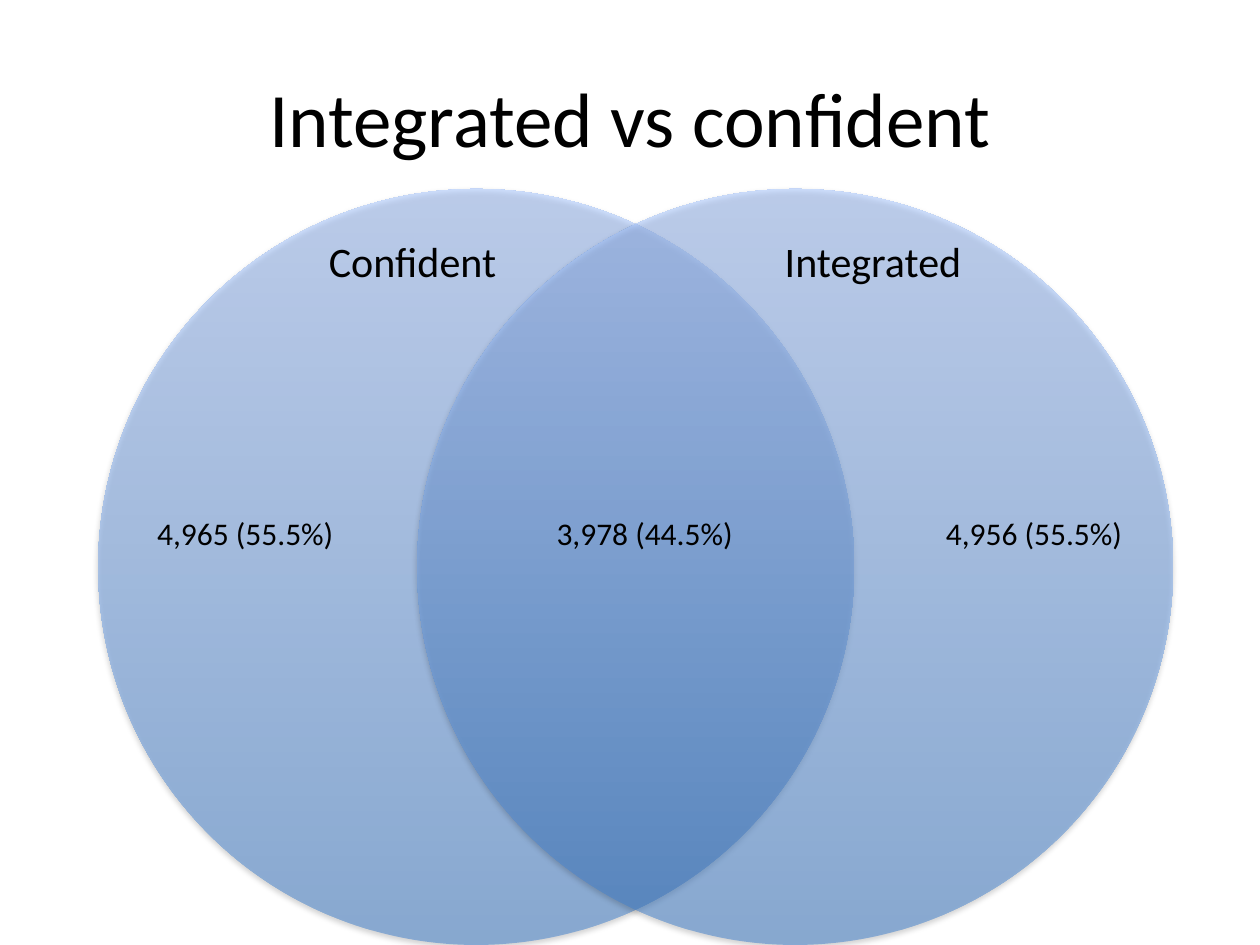
from lxml.etree import SubElement
from pptx import Presentation
from pptx.dml.color import RGBColor
from pptx.enum.shapes import MSO_SHAPE
from pptx.enum.text import MSO_ANCHOR, MSO_AUTO_SIZE, PP_ALIGN
from pptx.oxml.ns import qn
from pptx.util import Cm, Pt

TEXT_COLOR = "000000"
CIRCLE_COLORS = ("3F80CE", "A4C4FF")  # bottom to top
CIRCLE_ALPHA = 51
DIAMETER = 15.24
CIRCLE_OFFSET = 6.43

# text, left, top, width, height (cm, within the diagram), point size
LABELS = [
    ("Confident", 4.4, 0.81, 3.94, 1.27, 24),
    ("Integrated", 13.59, 0.81, 4.17, 1.27, 24),
    ("3,978 (44.5%)", 8.99, 6.43, 4.09, 1.02, 18),
    ("4,965 (55.5%)", 0.94, 6.43, 4.09, 1.02, 18),
    ("4,956 (55.5%)", 16.84, 6.43, 4.09, 1.02, 18),
]


def color(value):
    return RGBColor.from_string(value)


def add_text(slide, text, left, top, width, height, size, alignment=PP_ALIGN.LEFT, **frame_format):
    shape = slide.shapes.add_textbox(Cm(left), Cm(top), Cm(width), Cm(height))
    frame = shape.text_frame
    for name, value in frame_format.items():
        setattr(frame, name, value)
    paragraph = frame.paragraphs[0]
    paragraph.text = text
    paragraph.alignment = alignment
    for name, value in {"name": "Calibri", "size": Pt(size)}.items():
        setattr(paragraph.font, name, value)
    paragraph.font.color.rgb = color(TEXT_COLOR)


def add_alpha(color_element, percent):
    SubElement(color_element, qn("a:alpha"), val=str(percent * 1000))


def add_shadow(shape):
    shape.shadow.inherit = False
    effects = shape._element.spPr.find(qn("a:effectLst"))
    shadow = SubElement(effects, qn("a:outerShdw"), blurRad=str(Pt(3.1)),
                        dist=str(Pt(1.8)), dir="5400000", rotWithShape="0")
    add_alpha(SubElement(shadow, qn("a:srgbClr"), val="000000"), 35)


def add_circle(slide, left, top):
    """Add a translucent circle with a vertical gradient and a soft shadow."""
    shape = slide.shapes.add_shape(MSO_SHAPE.OVAL, Cm(left), Cm(top), Cm(DIAMETER), Cm(DIAMETER))
    shape.line.fill.background()
    shape.fill.gradient()
    shape.fill.gradient_angle = 90
    for position, (stop, value) in enumerate(zip(shape.fill.gradient_stops, CIRCLE_COLORS)):
        stop.position = position
        stop.color.rgb = color(value)
    for color_element in shape._element.spPr.iter(qn("a:srgbClr")):
        add_alpha(color_element, CIRCLE_ALPHA)
    add_shadow(shape)


def add_title(slide, left, top, width, height):
    add_text(slide, "Integrated vs confident", left, top, width, height, 44,
             PP_ALIGN.CENTER, word_wrap=True, vertical_anchor=MSO_ANCHOR.MIDDLE)


def add_venn_diagram(slide, left, top):
    for index in range(2):
        add_circle(slide, left + index * CIRCLE_OFFSET, top)
    for text, x, y, width, height, size in LABELS:
        add_text(slide, text, left + x, top + y, width, height, size,
                 word_wrap=False, auto_size=MSO_AUTO_SIZE.SHAPE_TO_FIT_TEXT)


def main():
    presentation = Presentation()
    presentation.slide_width, presentation.slide_height = Cm(25.4), Cm(19.05)
    slide = presentation.slides.add_slide(presentation.slide_layouts[6])
    add_title(slide, 1.27, 0.76, 22.86, 3.18)
    add_venn_diagram(slide, 1.98, 3.81)
    presentation.save("out.pptx")


if __name__ == "__main__":
    main()
